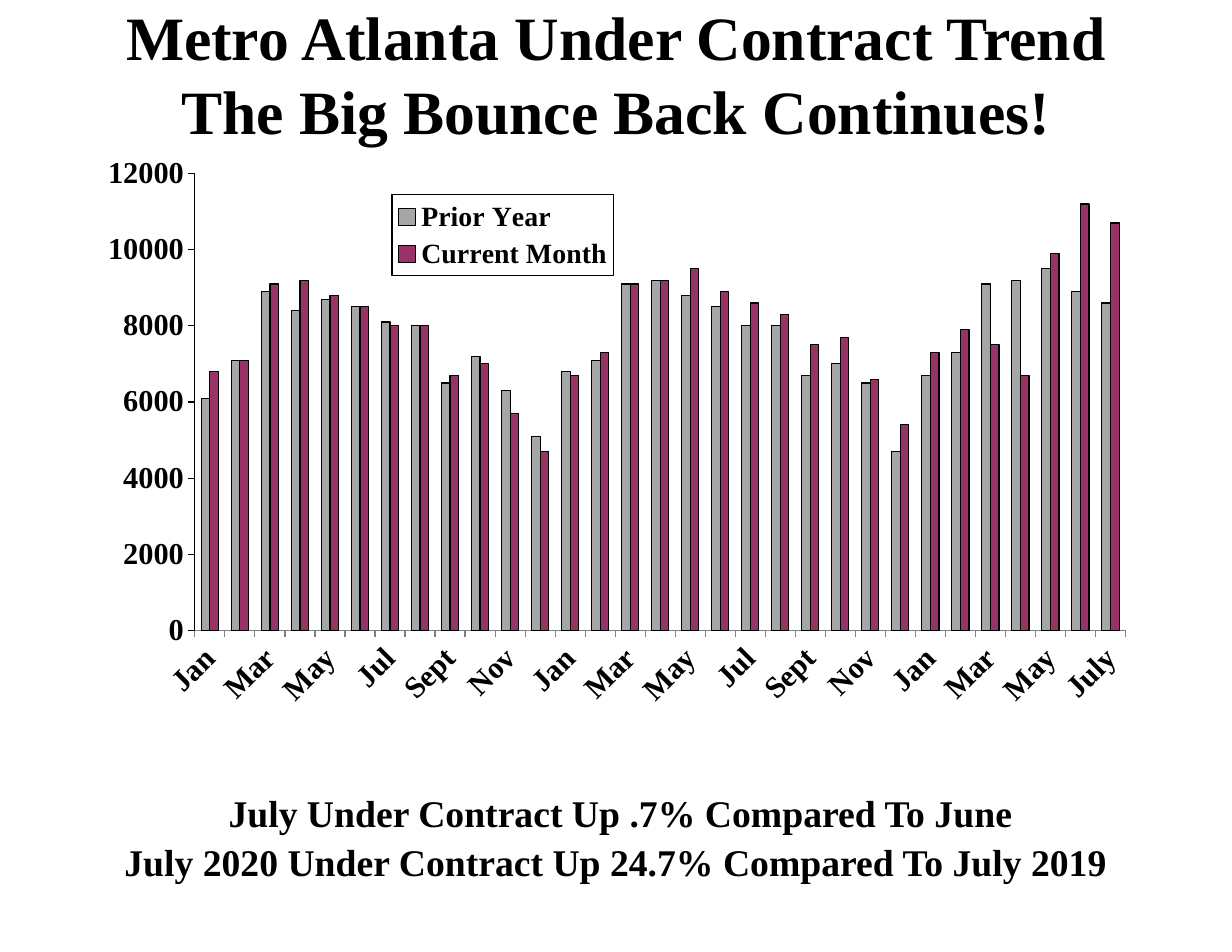
from dataclasses import dataclass
from lxml import etree
from pptx import Presentation
from pptx.chart.data import CategoryChartData
from pptx.dml.color import RGBColor
from pptx.enum.chart import XL_CHART_TYPE, XL_LEGEND_POSITION, XL_TICK_LABEL_POSITION, XL_TICK_MARK
from pptx.enum.text import MSO_ANCHOR, MSO_AUTO_SIZE, PP_ALIGN
from pptx.oxml import parse_xml
from pptx.oxml.ns import nsdecls, qn
from pptx.util import Inches, Pt


@dataclass(frozen=True)
class Theme:
    face: str = "Times New Roman"
    ink: str = "000000"
    rule: str = "808080"
    prior: str = "A6A6A6"
    current: str = "993366"
    title: float = 39.6
    body: float = 24.2
    axis: float = 19.5
    legend: float = 17.9


THEME = Theme()
YEAR = ["Jan", "Feb", "Mar", "Apr", "May", "Jun", "Jul", "Aug", "Sept", "Oct", "Nov", "Dec"]
MONTHS = YEAR * 2 + YEAR[:5] + ["June", "July"]
PRIOR = [6100, 7100, 8900, 8400, 8700, 8500, 8100, 8000, 6500, 7200, 6300, 5100,
         6800, 7100, 9100, 9200, 8800, 8500, 8000, 8000, 6700, 7000, 6500, 4700,
         6700, 7300, 9100, 9200, 9500, 8900, 8600]
CURRENT = [6800, 7100, 9100, 9200, 8800, 8500, 8000, 8000, 6700, 7000, 5700, 4700,
           6700, 7300, 9100, 9200, 9500, 8900, 8600, 8300, 7500, 7700, 6600, 5400,
           7300, 7900, 7500, 6700, 9900, 11200, 10700]


def style(font, size):
    font.name, font.size, font.bold = THEME.face, Pt(size), True
    font.color.rgb = RGBColor.from_string(THEME.ink)


def write(shape, box, lines, size, space=1.0, before=0):
    shape.left, shape.top, shape.width, shape.height = box
    frame = shape.text_frame
    frame.auto_size = MSO_AUTO_SIZE.NONE
    frame.word_wrap = True
    frame.vertical_anchor = MSO_ANCHOR.MIDDLE
    frame.text = "\n".join(lines)
    for para in frame.paragraphs:
        para.alignment = PP_ALIGN.CENTER
        para.line_spacing = space
        para.space_before = Pt(before)
        props = para._p.get_or_add_pPr()
        props.set("marL", "0")
        props.set("indent", "0")
        etree.SubElement(props, qn("a:buNone"))
        for run in para.runs:
            style(run.font, size)


def layout(box, part, inner=False):
    sizes = zip("xywh", part, (box[2], box[3]) * 2)
    target = '<c:layoutTarget val="inner"/>' if inner else ""
    modes = '<c:xMode val="edge"/><c:yMode val="edge"/>'
    rest = "".join(f'<c:{key} val="{size / full:.4f}"/>' for key, size, full in sizes)
    return parse_xml(f'<c:layout {nsdecls("c")}><c:manualLayout>{target}{modes}{rest}'
                     '</c:manualLayout></c:layout>')


def strip(node):
    for old in node.findall(qn("c:layout")):
        node.remove(old)


def draw_line(line, color, width):
    line.color.rgb = RGBColor.from_string(color)
    line.width = Pt(width)


def draw_axes(chart):
    months, count = chart.category_axis, chart.value_axis
    for axis, color in ((months, THEME.rule), (count, THEME.ink)):
        axis.has_major_gridlines = False
        axis.major_tick_mark = XL_TICK_MARK.OUTSIDE
        axis.minor_tick_mark = XL_TICK_MARK.NONE
        style(axis.tick_labels.font, THEME.axis)
        draw_line(axis.format.line, color, 0.75)
    count.minimum_scale, count.maximum_scale, count.major_unit = 0, 12000, 2000
    count.tick_labels.number_format = "0"
    count.tick_labels.number_format_is_linked = False
    months.tick_label_position = XL_TICK_LABEL_POSITION.LOW
    node = months._element
    node.find(qn("c:txPr")).find(qn("a:bodyPr")).set("rot", "-2700000")
    skip = parse_xml(f'<c:tickLblSkip {nsdecls("c")} val="2"/>')
    node.find(qn("c:noMultiLvlLbl")).addprevious(skip)


def draw_legend(chart, box):
    chart.has_legend = True
    legend = chart.legend
    legend.position = XL_LEGEND_POSITION.RIGHT
    legend.include_in_layout = False
    style(legend.font, THEME.legend)
    node = legend._element
    strip(node)
    part = [Inches(size) for size in (2.75, 0.74, 1.98, 0.72)]
    over = node.find(qn("c:overlay"))
    over.addprevious(layout(box, part))
    over.addnext(parse_xml(
        f'<c:spPr {nsdecls("c", "a")}><a:solidFill><a:srgbClr val="FFFFFF"/></a:solidFill>'
        f'<a:ln w="{Pt(0.75)}"><a:solidFill><a:srgbClr val="{THEME.ink}"/></a:solidFill>'
        '</a:ln></c:spPr>'))


def draw_chart(slide, box):
    data = CategoryChartData()
    data.categories = MONTHS
    data.add_series("Prior Year", PRIOR)
    data.add_series("Current Month", CURRENT)
    chart = slide.shapes.add_chart(XL_CHART_TYPE.COLUMN_CLUSTERED, *box, data).chart
    chart.has_title = False
    style(chart.font, THEME.axis)
    plot = chart.plots[0]
    plot.gap_width, plot.overlap, plot.vary_by_categories = 150, 0, False
    for series, color in zip(plot.series, (THEME.prior, THEME.current)):
        series.format.fill.solid()
        series.format.fill.fore_color.rgb = RGBColor.from_string(color)
        draw_line(series.format.line, THEME.ink, 0.75)
    draw_axes(chart)
    draw_legend(chart, box)
    area = chart._chartSpace.chart.plotArea
    strip(area)
    part = [Inches(size) for size in (0.99, 0.55, 8.31, 4.08)]
    area.insert(0, layout(box, part, inner=True))


def main():
    deck = Presentation()
    deck.slide_width, deck.slide_height = Inches(11), Inches(8.5)
    slide = deck.slides.add_slide(deck.slide_layouts[1])
    wide = deck.slide_width
    write(slide.shapes.title, (0, Inches(0.02), wide, Inches(1.26)),
          ["Metro Atlanta Under Contract Trend\vThe Big Bounce Back Continues!"], THEME.title)
    draw_chart(slide, (Inches(0.75), Inches(1), Inches(9.64), Inches(5.81)))
    write(slide.placeholders[1], (0, Inches(7), wide, Inches(1)),
          [" July Under Contract Up .7% Compared To June",
           "July 2020 Under Contract Up 24.7% Compared To July 2019"],
          THEME.body, space=0.9, before=5)
    deck.save("out.pptx")


if __name__ == "__main__":
    main()
